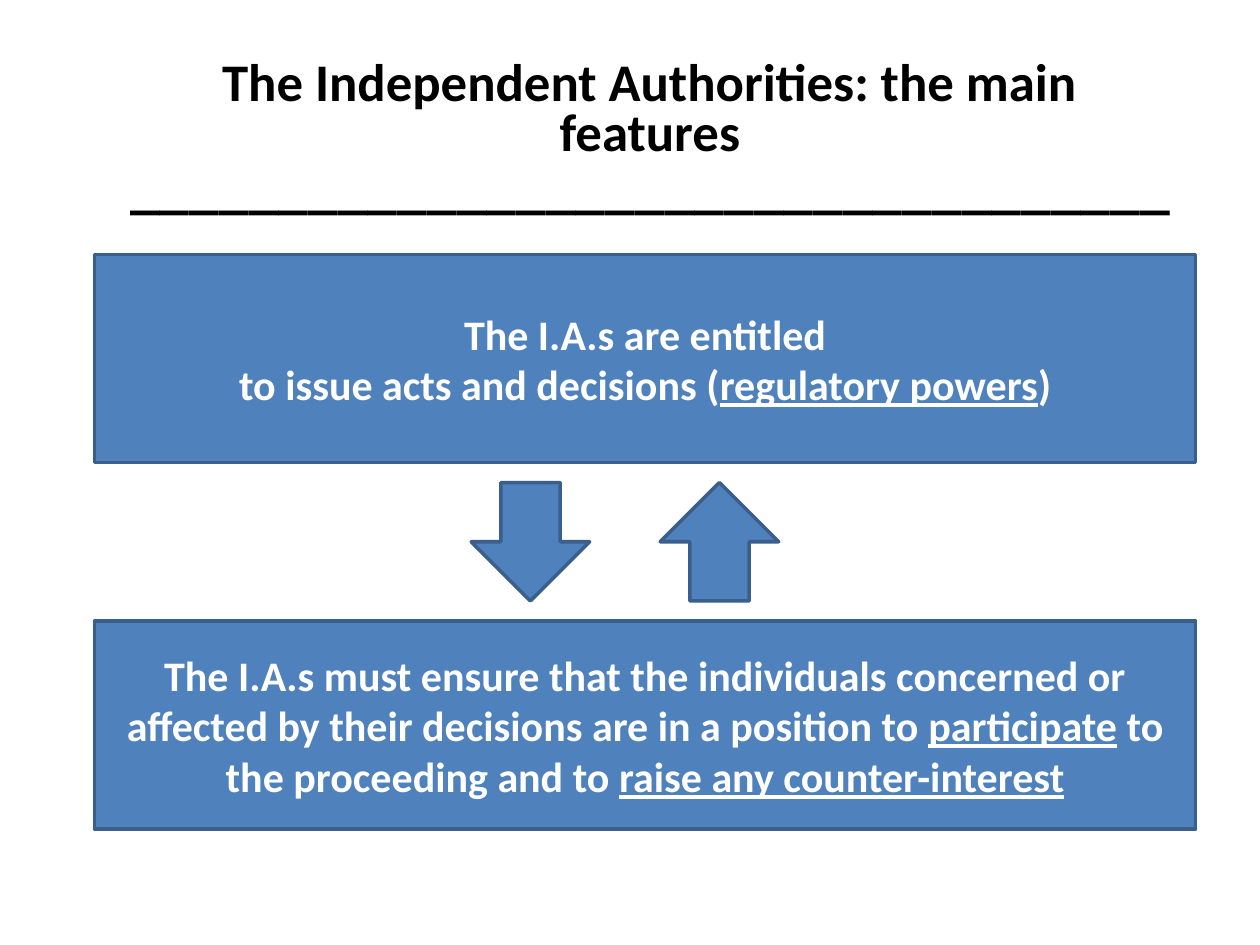
"""Build a slide on the main features of the Independent Authorities."""
from dataclasses import dataclass

from pptx import Presentation, util as u
from pptx.dml.color import RGBColor
from pptx.enum import shapes, text

TITLE = "The Independent Authorities: the main features"
RULE = "_" * 35
POWERS = [
    [("The I.A.s are entitled", False)],
    [("to issue acts and decisions (", False), ("regulatory powers", True), (")", False)],
]
DUTIES = [
    [("The I.A.s must ensure that the individuals concerned or affected by "
      "their decisions are in a position to ", False),
     ("participate", True),
     (" to the proceeding and to ", False),
     ("raise any counter-interest", True)],
]
ARROWS = [shapes.MSO_SHAPE.DOWN_ARROW, shapes.MSO_SHAPE.UP_ARROW]


@dataclass(frozen=True)
class Theme:
    font: str = "Calibri"
    ink: str = "000000"
    paper: str = "FFFFFF"
    fill: str = "4F81BD"
    edge: str = "3A5F8C"
    edge_width: float = 2
    title_size: float = 30.2
    rule_size: float = 34.1
    body_size: float = 24


THEME = Theme()
LEFT, TOP, WIDTH, HEIGHT = 0.75, 2.02, 8.74, 1.65
GAP, ARROW_SIZE, ARROW_LEFT, ARROW_STEP = 0.16, 0.94, 3.74, 1.5


def write(frame, paragraphs, sizes, color, spacing=None):
    frame.word_wrap = True
    frame.vertical_anchor = text.MSO_ANCHOR.MIDDLE
    for index, (pieces, size) in enumerate(zip(paragraphs, sizes)):
        paragraph = frame.paragraphs[0] if index == 0 else frame.add_paragraph()
        paragraph.alignment = text.PP_ALIGN.CENTER
        paragraph.line_spacing = spacing
        for words, underlined in pieces:
            run = paragraph.add_run()
            run.text = words
            run.font.name = THEME.font
            run.font.size = u.Pt(size)
            run.font.bold = True
            run.font.underline = underlined
            run.font.color.rgb = RGBColor.from_string(color)


def add_block(slide, kind, *box):
    block = slide.shapes.add_shape(kind, *map(u.Inches, box))
    block.shadow.inherit = False
    block.fill.solid()
    block.fill.fore_color.rgb = RGBColor.from_string(THEME.fill)
    block.line.color.rgb = RGBColor.from_string(THEME.edge)
    block.line.width = u.Pt(THEME.edge_width)
    return block


def main():
    deck = Presentation()
    deck.slide_width, deck.slide_height = u.Inches(10), u.Inches(7.5)
    slide = deck.slides.add_slide(deck.slide_layouts[6])

    heading = slide.shapes.add_textbox(*map(u.Inches, (0.91, 0.36, 8.5, 1.5)))
    write(heading.text_frame, [[(TITLE, False)], [(RULE, False)]],
          sizes=(THEME.title_size, THEME.rule_size), color=THEME.ink, spacing=0.8)

    arrow_top = TOP + HEIGHT + GAP
    duties_top = arrow_top + ARROW_SIZE + GAP
    for top, statement in ((TOP, POWERS), (duties_top, DUTIES)):
        panel = add_block(slide, shapes.MSO_SHAPE.RECTANGLE, LEFT, top, WIDTH, HEIGHT)
        write(panel.text_frame, statement,
              sizes=[THEME.body_size] * len(statement), color=THEME.paper)
    for column, direction in enumerate(ARROWS):
        add_block(slide, direction, ARROW_LEFT + column * ARROW_STEP, arrow_top,
                  ARROW_SIZE, ARROW_SIZE)

    deck.save("out.pptx")


if __name__ == "__main__":
    main()
